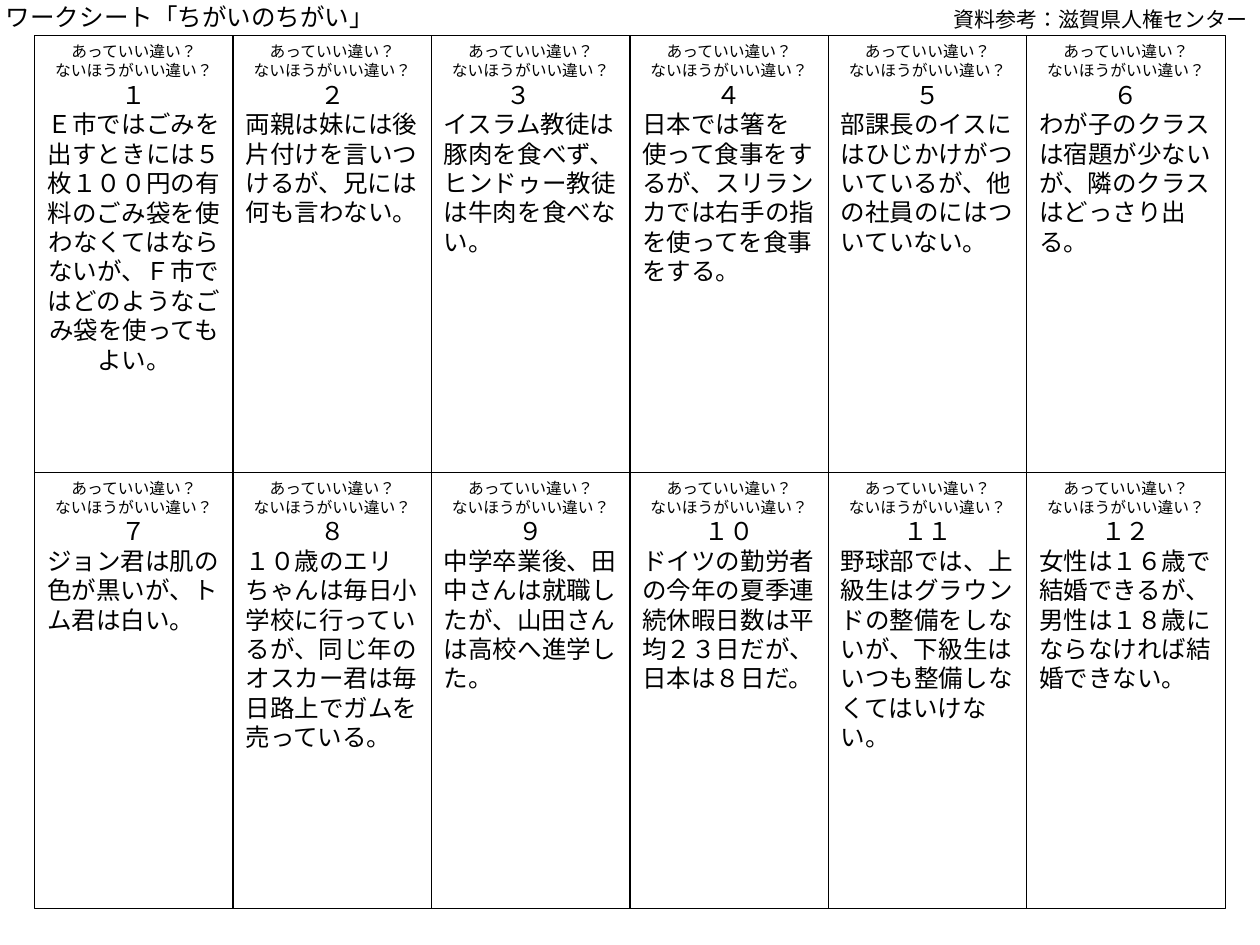
import pptx
import pptx.util
import pptx.dml.color
import pptx.enum.lang
import pptx.enum.text
import pptx.enum.shapes

Cm, Pt = pptx.util.Cm, pptx.util.Pt
ALIGN = pptx.enum.text.PP_ALIGN

# Content
HEADING = "ワークシート「ちがいのちがい」"
CREDIT = "資料参考：滋賀県人権センター"
QUESTION = ("あっていい違い？", "ないほうがいい", "違い？")
CARDS = [
    ("１", "Ｅ市ではごみを出すときには５枚１００円の有料のごみ袋を使わなくてはならないが、Ｆ市ではどのようなごみ袋を使ってもよい。"),
    ("２", "両親は妹には後片付けを言いつけるが、兄には何も言わない。"),
    ("３　", "イスラム教徒は豚肉を食べず、ヒンドゥー教徒は牛肉を食べない。"),
    ("４", "日本では箸を使って食事をするが、スリランカでは右手の指を使ってを食事をする。"),
    ("５", "部課長のイスにはひじかけがついているが、他の社員のにはついていない。"),
    ("６", "わが子のクラスは宿題が少ないが、隣のクラスはどっさり出る。"),
    ("７", "ジョン君は肌の色が黒いが、トム君は白い。"),
    ("８", "１０歳のエリちゃんは毎日小学校に行っているが、同じ年のオスカー君は毎日路上でガムを売っている。"),
    ("９", "中学卒業後、田中さんは就職したが、山田さんは高校へ進学した。"),
    ("１０", "ドイツの勤労者の今年の夏季連続休暇日数は平均２３日だが、日本は８日だ。"),
    ("１１", "野球部では、上級生はグラウンドの整備をしないが、下級生はいつも整備しなくてはいけない。"),
    ("１２", "女性は１６歳で結婚できるが、男性は１８歳にならなければ結婚できない。"),
]

THEME = {
    "ink": pptx.dml.color.RGBColor(0, 0, 0),
    "card_font": "Calibri", "label_font": "Arial",
    "question": Pt(9), "body": Pt(14), "credit": Pt(12), "line": Pt(0.75),
}
COLUMNS = 6
GRID_LEFT, GRID_TOP = 0.7, 0.72
CARD_WIDTH, CARD_HEIGHT = 4.0, 8.8


def set_values(target, values):
    for name, value in values.items():
        setattr(target, name, value)


def format_paragraph(paragraph, alignment):
    paragraph.alignment = alignment
    # Keep line-ending punctuation inside the text area
    paragraph._p.get_or_add_pPr().set("hangingPunct", "0")


def add_run(paragraph, text, size, font):
    run = paragraph.add_run()
    run.text = text
    set_values(run.font, {
        "size": size, "name": font,
        "language_id": pptx.enum.lang.MSO_LANGUAGE_ID.JAPANESE,
    })
    run.font.color.rgb = THEME["ink"]


def add_question(paragraph):
    first, second, last = QUESTION
    format_paragraph(paragraph, ALIGN.CENTER)
    add_run(paragraph, first, THEME["question"], THEME["card_font"])
    paragraph.add_line_break()
    add_run(paragraph, second, THEME["question"], THEME["label_font"])
    add_run(paragraph, last, THEME["question"], THEME["card_font"])


def format_card(shape, index):
    row, column = divmod(index, COLUMNS)
    set_values(shape, {
        "left": Cm(GRID_LEFT + column * CARD_WIDTH),
        "top": Cm(GRID_TOP + row * CARD_HEIGHT),
        "width": Cm(CARD_WIDTH), "height": Cm(CARD_HEIGHT),
    })
    shape.fill.background()
    shape.line.color.rgb = THEME["ink"]
    shape.line.width = THEME["line"]
    set_values(shape.text_frame, {
        "word_wrap": True,
        "auto_size": pptx.enum.text.MSO_AUTO_SIZE.NONE,
        "vertical_anchor": pptx.enum.text.MSO_ANCHOR.TOP,
    })


def add_label(slide, text, box, size, alignment):
    label = slide.shapes.add_textbox(*map(Cm, box))
    label.text_frame.word_wrap = True
    paragraph = label.text_frame.paragraphs[0]
    format_paragraph(paragraph, alignment)
    add_run(paragraph, text, size, THEME["label_font"])


def main():
    presentation = pptx.Presentation()
    set_values(presentation, {"slide_width": Cm(25.4), "slide_height": Cm(19.05)})
    slide = presentation.slides.add_slide(presentation.slide_layouts[5])
    body_style = (THEME["body"], THEME["card_font"])

    # Cards: the first is the title, one centred paragraph with line breaks
    for index, (number, statement) in enumerate(CARDS):
        if index == 0:
            shape = slide.shapes.title
        else:
            shape = slide.shapes.add_shape(
                pptx.enum.shapes.MSO_SHAPE.RECTANGLE, 0, 0, 0, 0)
            shape.shadow.inherit = False
        format_card(shape, index)
        frame = shape.text_frame
        paragraph = frame.paragraphs[0]
        add_question(paragraph)
        for text, alignment in ((number, ALIGN.CENTER), (statement, ALIGN.LEFT)):
            if index == 0:
                paragraph.add_line_break()
            else:
                paragraph = frame.add_paragraph()
                format_paragraph(paragraph, alignment)
            add_run(paragraph, text, *body_style)

    # Heading and credit above the grid
    add_label(slide, HEADING, (-0.13, -0.08, 8.8, 0.86), THEME["body"], ALIGN.LEFT)
    add_label(slide, CREDIT, (11, 0, 14.4, 0.76), THEME["credit"], ALIGN.RIGHT)

    presentation.save("out.pptx")


if __name__ == "__main__":
    main()
